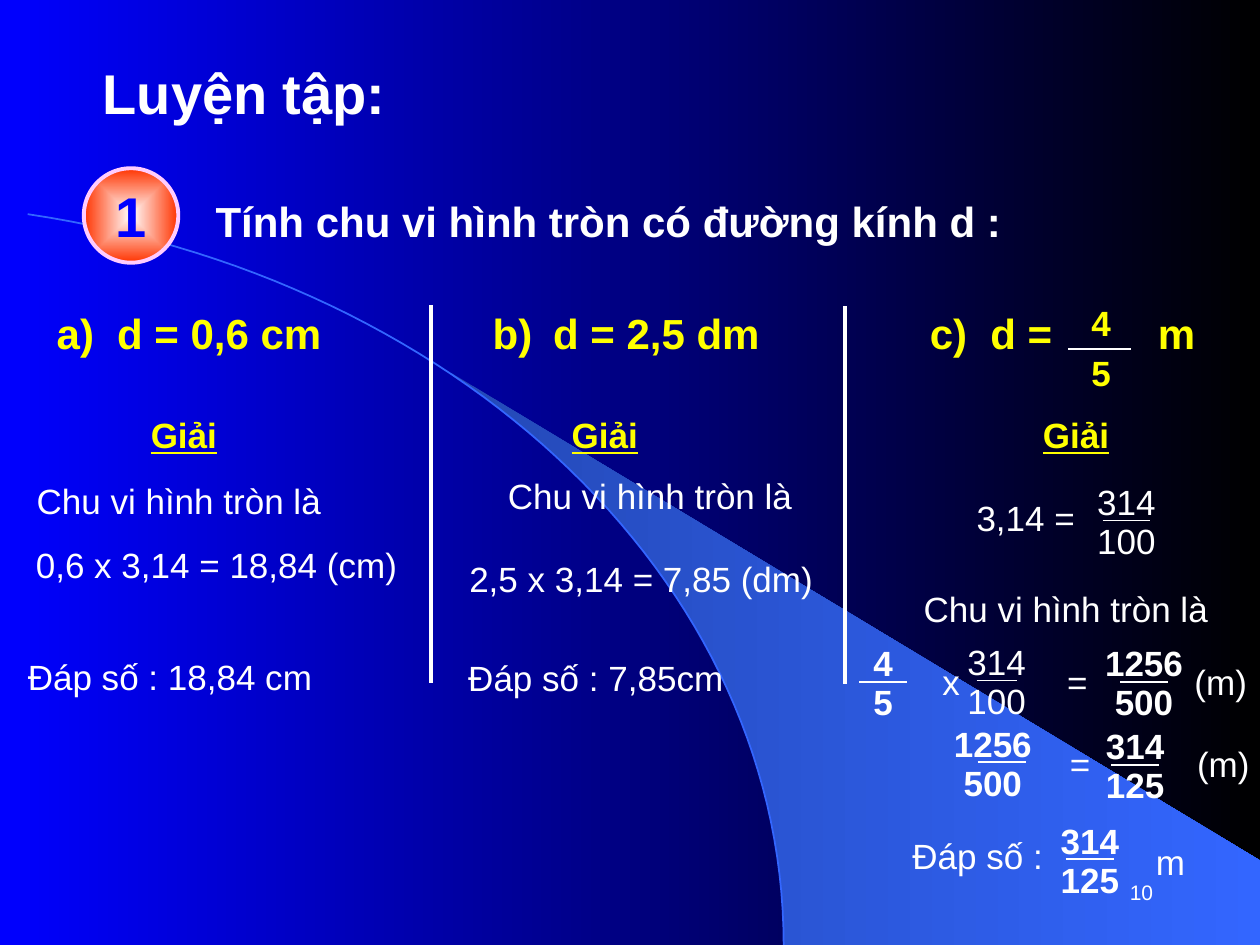
from lxml.etree import SubElement as Sub
from pptx import Presentation
from pptx.dml.color import RGBColor
from pptx.enum.shapes import MSO_CONNECTOR as Conn, MSO_SHAPE as Kind
from pptx.enum.text import MSO_ANCHOR as Anchor, PP_ALIGN as Align
from pptx.oxml.ns import qn
from pptx.util import Inches, Pt

rgb = RGBColor.from_string
WHITE, GOLD, BLUE = "FFFFFF", "FFFF00", "3366FF"

deck = Presentation()
deck.slide_width, deck.slide_height = Inches(10), Inches(7.5)
slide = deck.slides.add_slide(deck.slide_layouts[5])
shapes = slide.shapes


def text(words, x, y, size=20, bold=False, color=WHITE, wide=2.8, tall=0.5, tabs=None, box=None):
    left = x if tabs is not None else x - wide / 2
    if tabs is not None:
        wide = 10 - x
    if box is None:
        box = shapes.add_textbox(0, 0, 0, 0)
    box.left, box.top = Inches(left), Inches(y - tall / 2)
    box.width, box.height = Inches(wide), Inches(tall)
    frame = box.text_frame
    frame.margin_left = frame.margin_right = frame.margin_top = frame.margin_bottom = 0
    frame.vertical_anchor = Anchor.MIDDLE
    frame.word_wrap = tabs is not None
    frame.text = words
    para = frame.paragraphs[0]
    para.alignment = Align.CENTER if tabs is None else Align.LEFT
    if tabs:
        stops = Sub(para._p.get_or_add_pPr(), qn("a:tabLst"))
        for tab in tabs:
            Sub(stops, qn("a:tab"), pos=str(Inches(tab)), algn="l")
    font = para.runs[0].font
    font.name, font.size, font.bold = "Arial", Pt(size), bold
    font.color.rgb = rgb(color)
    return font


def rule(x1, y1, x2, y2, width=1):
    line = shapes.add_connector(Conn.STRAIGHT, Inches(x1), Inches(y1), Inches(x2), Inches(y2))
    line.line.color.rgb = rgb(WHITE)
    line.line.width = Pt(width)
    Sub(line._element.spPr, qn("a:effectLst"))


curve = []
for step in range(61):
    t = step / 60
    u = 1 - t
    a, b, c, d = u ** 3, 3 * u * u * t, 3 * u * t * t, t ** 3
    curve.append((0.22 * a + 3.7 * b + 6.22 * (c + d), 1.7 * a + 2.22 * b + 4.66 * c + 7.5 * d))
edge = [(x, y) for x, y in curve if x > 3.58]
band = [(10, 7.5), (10, 6.83), (3.58, 2.96)] + edge

forms = []
for points, closed in ((band, True), (curve, False)):
    first, *rest = [(Inches(x), Inches(y)) for x, y in points]
    path = shapes.build_freeform(*first)
    path.add_line_segments(rest, close=closed)
    form = path.convert_to_shape()
    form.shadow.inherit = False
    forms.append(form)
sweep, arc = forms
sweep.line.fill.background()
arc.fill.background()
arc.line.color.rgb = rgb(BLUE)
arc.line.width = Pt(1)

ball = shapes.add_shape(Kind.OVAL, Inches(0.67), Inches(1.34), Inches(0.75), Inches(0.75))
ball.shadow.inherit = False
ball.line.color.rgb = rgb("FFCCFF")
ball.line.width = Pt(2.25)

for fill, start, end in (
    (slide.background.fill, "0000FF", "000000"),
    (sweep.fill, "2449B6", BLUE),
    (ball.fill, WHITE, "FF3300"),
):
    fill.gradient()
    fill.gradient_angle = 0
    for stop, color, place in zip(fill.gradient_stops, (start, end), (0, 1)):
        stop.color.rgb = rgb(color)
        stop.position = place

grad = ball._element.spPr.find(qn("a:gradFill"))
grad.remove(grad.find(qn("a:lin")))
glow = Sub(grad, qn("a:path"), path="shape")
Sub(glow, qn("a:fillToRect"), l="50000", t="50000", r="50000", b="50000")

text("Luyện tập:", 1.94, 0.73, 32, True, wide=3.06, box=shapes.title)
text("1", 1.04, 1.71, 32, True, "0000FF", 0.75, 0.75, box=ball)
text("Tính chu vi hình tròn có đường kính d :", 4.83, 1.75, 24, True, wide=6.6)

for words, x in (("a)\td = 0,6 cm", 0.45), ("b)\td = 2,5 dm", 3.91), ("c)\td =\tm", 7.38)):
    text(words, x, 2.64, 24, True, GOLD, tabs=(0.48, 1.81))
for x in (1.46, 4.8, 8.54):
    text("Giải", x, 3.45, 20, True, GOLD, 1.4).underline = True
for x, y in ((3.42, 2.42), (6.71, 2.43)):
    rule(x, y, x, y + 3, 2.25)

for words, x, y in (
    ("Chu vi hình tròn là", 1.42, 3.97),
    ("Chu vi hình tròn là", 5.16, 3.93),
    ("Chu vi hình tròn là", 8.46, 4.83),
    ("0,6 x 3,14 = 18,84 (cm)", 1.72, 4.48),
    ("2,5 x 3,14 = 7,85 (dm)", 5.09, 4.59),
    ("Đáp số : 18,84 cm", 1.35, 5.37),
    ("Đáp số : 7,85cm", 4.73, 5.38),
    ("Đáp số :", 7.76, 6.79),
):
    text(words, x, y, wide=3.2 if "x" in words else 2.6)
text("m", 9.29, 6.84, wide=0.4)
text("10", 9.06, 7.08, 12, wide=0.3)

for words, x, y, tabs in (
    ("3,14 =", 7.75, 4.11, ()),
    ("x\t=\t(m)", 7.48, 5.41, (0.99, 2)),
    ("=\t(m)", 8.49, 6.06, (1.01,)),
):
    text(words, x, y, tabs=tabs)

for top, low, x, y, bold, shift in (
    ("314", "100", 8.94, 4.13, False, 0),
    ("4", "5", 7.01, 5.41, True, 0),
    ("314", "100", 7.91, 5.4, False, 0),
    ("1256", "500", 9.08, 5.41, True, 0),
    ("1256", "500", 7.95, 6.05, True, -0.07),
    ("314", "125", 9.01, 6.07, True, 0),
    ("314", "125", 8.65, 6.82, True, 0),
):
    text(top, x + shift, y - 0.15, bold=bold, wide=0.8)
    text(low, x + shift, y + 0.16, bold=bold, wide=0.8)
    half = 0.16 if x == 7.91 else 0.19
    rule(x - half, y, x + half, y)

text("4", 8.74, 2.56, 20, True, GOLD, 0.5)
text("5", 8.74, 2.96, 20, True, GOLD, 0.5)
rule(8.48, 2.77, 8.98, 2.77)

deck.save("out.pptx")
